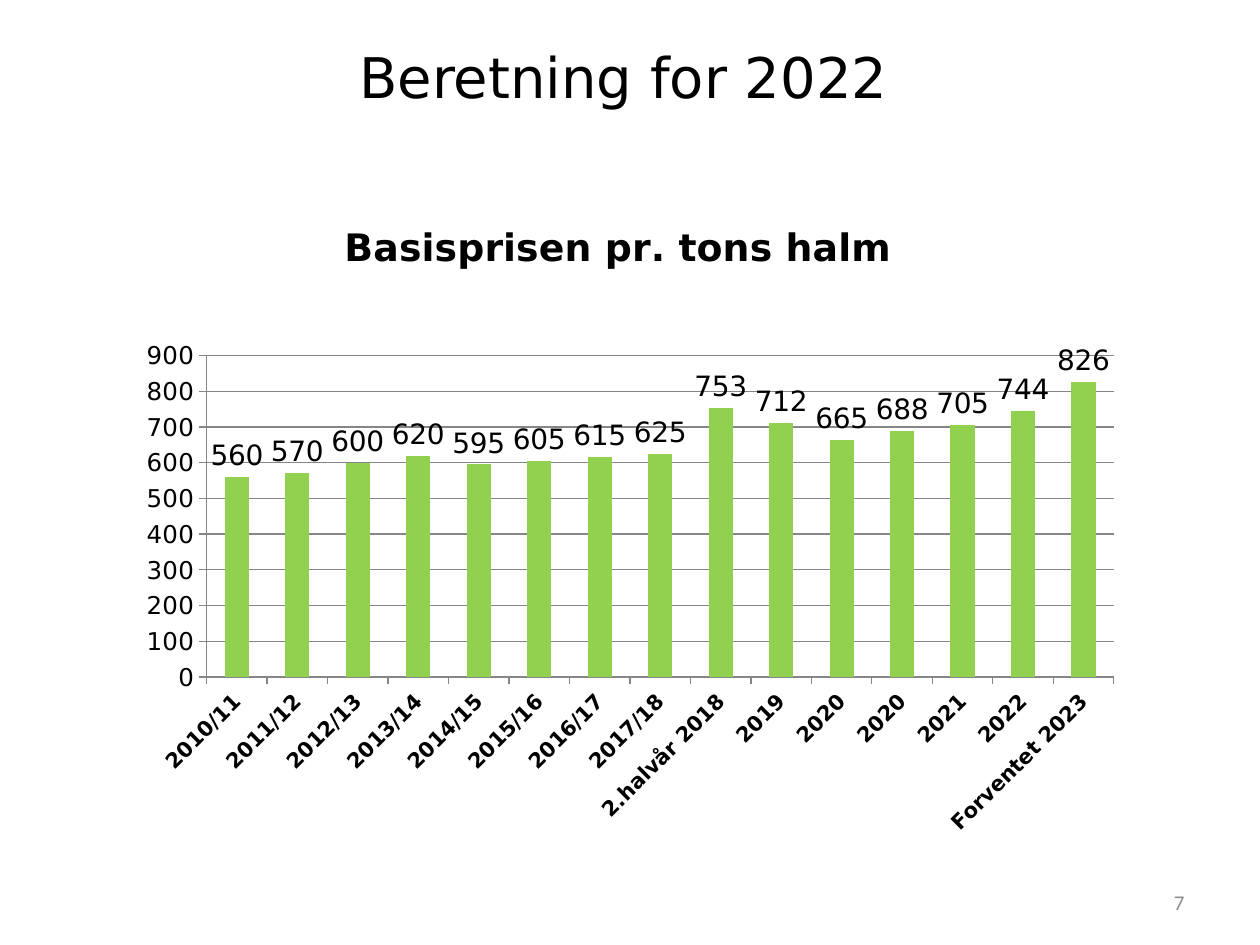
from dataclasses import dataclass

import pptx
import pptx.chart.data
import pptx.dml.color
import pptx.enum.chart
import pptx.enum.text
import pptx.oxml
import pptx.oxml.ns
import pptx.util


@dataclass(frozen=True)
class Theme:
    face: str = "DejaVu Sans"
    small: str = "Calibri"
    ink: str = "000000"
    grey: str = "8C8C8C"
    line: str = "868686"
    bar: str = "92D050"
    head: float = 32
    name: float = 21.6
    mark: float = 16
    scale: float = 14
    note: float = 12


THEME = Theme()
WIDE, HIGH = pptx.util.Inches(10), pptx.util.Inches(7.5)
YEARS = [f"20{y}/{y + 1}" for y in range(10, 18)] + [
    "2.halvår 2018", "2019", "2020", "2020", "2021", "2022", "Forventet 2023"]
PRICES = [560, 570, 600, 620, 595, 605, 615, 625,
          753, 712, 665, 688, 705, 744, 826]


def share(x, y, w, h):
    return int(x * WIDE), int(y * HIGH), int(w * WIDE), int(h * HIGH)


def tint(code):
    return pptx.dml.color.RGBColor.from_string(code)


def style(font, size, bold=False, face=THEME.face, code=THEME.ink):
    font.name, font.size, font.bold = face, pptx.util.Pt(size), bold
    font.color.rgb = tint(code)


def rule(line):
    line.color.rgb = tint(THEME.line)
    line.width = pptx.util.Pt(0.75)


def pin(node, spot, **sizes):
    tag = pptx.oxml.ns.qn("c:layout")
    old = node.find(tag)
    parts = "".join(f'<c:{k} val="{v}"/>' for k, v in sizes.items())
    new = pptx.oxml.parse_xml(
        f'<c:layout {pptx.oxml.ns.nsdecls("c")}><c:manualLayout>{parts}'
        '</c:manualLayout></c:layout>')
    if old is not None:
        node.remove(old)
    node.insert(spot, new)


def add_head(slide, box):
    head = slide.shapes.title
    head.left, head.top, head.width, head.height = box
    frame = head.text_frame
    frame.text = "Beretning for 2022"
    frame.vertical_anchor = pptx.enum.text.MSO_ANCHOR.TOP
    frame.margin_top = pptx.util.Inches(0.11)
    para = frame.paragraphs[0]
    para.alignment = pptx.enum.text.PP_ALIGN.CENTER
    style(para.runs[0].font, THEME.head)


def add_bars(slide, box):
    data = pptx.chart.data.CategoryChartData(number_format="#,##0")
    data.categories = YEARS
    data.add_series("Series 1", PRICES)
    kind = pptx.enum.chart.XL_CHART_TYPE.COLUMN_CLUSTERED
    chart = slide.shapes.add_chart(kind, *box, data).chart
    chart.has_legend = False
    style(chart.font, 18, face=THEME.small)

    title = chart.chart_title
    title.text_frame.text = "Basisprisen pr. tons halm"
    style(title.text_frame.paragraphs[0].runs[0].font, THEME.name, True)
    title.include_in_layout = False
    pin(title._element, 1, xMode="edge", yMode="edge", x=0.21, y=0.01)
    area = chart._chartSpace.chart.plotArea
    pin(area, 0, layoutTarget="inner", xMode="edge", yMode="edge",
        x=0.08, y=0.23, w=0.9, h=0.5)

    plot = chart.plots[0]
    plot.gap_width = 150
    plot.vary_by_categories = False
    fill = plot.series[0].format.fill
    fill.solid()
    fill.fore_color.rgb = tint(THEME.bar)
    plot.has_data_labels = True
    marks = plot.data_labels
    marks.show_value = True
    marks.number_format, marks.number_format_is_linked = "#,##0", False
    marks.position = pptx.enum.chart.XL_LABEL_POSITION.OUTSIDE_END
    style(marks.font, THEME.mark)

    years, scale = chart.category_axis, chart.value_axis
    for axis in (years, scale):
        axis.major_tick_mark = pptx.enum.chart.XL_TICK_MARK.OUTSIDE
        rule(axis.format.line)
    style(years.tick_labels.font, THEME.note, True)
    years._element.txPr.bodyPr.set("rot", "-2700000")
    style(scale.tick_labels.font, THEME.scale)
    scale.tick_labels.number_format = "#,##0"
    scale.tick_labels.number_format_is_linked = False
    scale.minimum_scale, scale.maximum_scale = 0, 900
    scale.major_unit = 100
    scale.has_major_gridlines = True
    rule(scale.major_gridlines.format.line)


def add_page(slide, box):
    frame = slide.shapes.add_textbox(*box).text_frame
    frame.word_wrap = True
    frame.text = "7"
    frame.vertical_anchor = pptx.enum.text.MSO_ANCHOR.MIDDLE
    para = frame.paragraphs[0]
    para.alignment = pptx.enum.text.PP_ALIGN.RIGHT
    style(para.runs[0].font, THEME.note, face=THEME.small, code=THEME.grey)


def main():
    deck = pptx.Presentation()
    deck.slide_width, deck.slide_height = WIDE, HIGH
    slide = deck.slides.add_slide(deck.slide_layouts[5])
    add_head(slide, share(0.07, 0.03, 0.85, 0.17))
    add_bars(slide, share(0.1, 0.22, 0.8, 0.68))
    add_page(slide, share(0.72, 0.93, 0.23, 0.05))
    deck.save("out.pptx")


if __name__ == "__main__":
    main()
